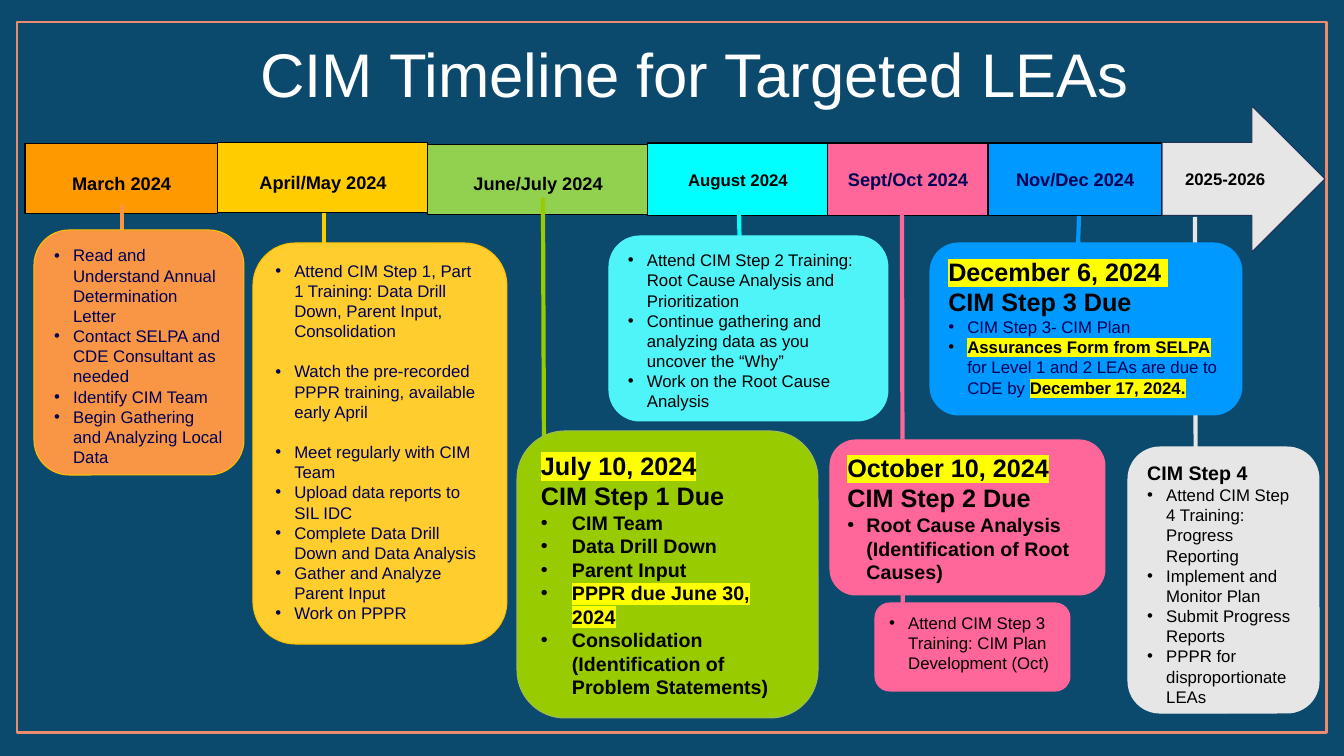
import dataclasses

import pptx
import pptx.dml.color
import pptx.enum.shapes
import pptx.enum.text
import pptx.oxml.ns
import pptx.util
from lxml import etree

RGBColor = pptx.dml.color.RGBColor
SHAPE = pptx.enum.shapes.MSO_SHAPE
ALIGN = pptx.enum.text.PP_ALIGN
ANCHOR = pptx.enum.text.MSO_ANCHOR
qn = pptx.oxml.ns.qn

PX = 12192000 / 1344
FONT = "Arial"

BACKGROUND = RGBColor(0x0C, 0x4A, 0x6D)
CORAL = RGBColor(0xED, 0x8B, 0x6F)
WHITE = RGBColor(0xFF, 0xFF, 0xFF)
BLACK = RGBColor(0, 0, 0)
NAVY = RGBColor(0, 0, 0x54)
ARROW_EDGE = RGBColor(0x1E, 0x32, 0x56)
ORANGE = RGBColor(0xFF, 0x99, 0)
SOFT_ORANGE = RGBColor(0xF8, 0x96, 0x45)
AMBER = RGBColor(0xFF, 0xC0, 0)
YELLOW = RGBColor(0xFF, 0xCC, 0)
SOFT_YELLOW = RGBColor(0xFF, 0xCD, 0x2D)
GREEN = RGBColor(0x92, 0xD0, 0x50)
LIME = RGBColor(0x99, 0xCC, 0)
LIME_EDGE = RGBColor(0x9C, 0xBB, 0x58)
CYAN = RGBColor(0, 0xFF, 0xFF)
SOFT_CYAN = RGBColor(0x4E, 0xF4, 0xF8)
PINK = RGBColor(0xFF, 0x66, 0x99)
BLUE = RGBColor(0, 0x99, 0xFF)
GRAY = RGBColor(0xE7, 0xE6, 0xE6)
HIGHLIGHT = RGBColor(0xFF, 0xFF, 0)


@dataclasses.dataclass
class Run:
    text: str
    size: int = 12
    color: RGBColor = BLACK
    bold: bool = False
    marked: bool = False


@dataclasses.dataclass
class Item:
    """One paragraph; an indent above zero makes it a bullet."""
    runs: list
    indent: int = 0
    gap: float = 0


def px(length):
    return pptx.util.Emu(round(length * PX))


def bullets(texts, indent=19, **style):
    return [Item([Run(text, **style)], indent) for text in texts]


def due_heading(date, step):
    return [Item([Run(date, 18, bold=True, marked=True)]),
            Item([Run(step, 18, bold=True)])]


def add_run(paragraph, run):
    text_run = paragraph.add_run()
    text_run.text = run.text
    font = text_run.font
    font.size = pptx.util.Pt(run.size)
    font.bold = run.bold
    font.color.rgb = run.color
    font.name = FONT
    if run.marked:
        fill = text_run._r.rPr.find(qn("a:solidFill"))
        highlight = etree.Element(qn("a:highlight"))
        etree.SubElement(highlight, qn("a:srgbClr"), val=str(HIGHLIGHT))
        fill.addnext(highlight)


def add_items(frame, items, align):
    frame.word_wrap = True
    for index, item in enumerate(items):
        paragraph = frame.add_paragraph() if index else frame.paragraphs[0]
        paragraph.alignment = align
        if item.gap:
            paragraph.space_before = pptx.util.Pt(item.gap)
        if item.indent:
            properties = paragraph._p.get_or_add_pPr()
            properties.set("marL", str(px(item.indent)))
            properties.set("indent", str(px(-item.indent)))
            etree.SubElement(properties, qn("a:buFont"), typeface=FONT)
            etree.SubElement(properties, qn("a:buChar"), char="•")
        for run in item.runs:
            add_run(paragraph, run)


def add_box(slide, kind, box, fill, edge, width=0.75):
    shape = slide.shapes.add_shape(kind, *map(px, box))
    shape.shadow.inherit = False
    if fill is None:
        shape.fill.background()
    else:
        shape.fill.solid()
        shape.fill.fore_color.rgb = fill
    shape.line.color.rgb = edge
    shape.line.width = pptx.util.Pt(width)
    return shape


def add_title(slide, box):
    title = slide.shapes.title
    title.left, title.top, title.width, title.height = map(px, box)
    title.text_frame.vertical_anchor = ANCHOR.MIDDLE
    add_items(title.text_frame, [Item([Run("CIM Timeline for Targeted LEAs", 44, WHITE)])], ALIGN.CENTER)
    title.text_frame.paragraphs[0].line_spacing = 0.9


def add_period(slide, kind, box, fill, edge, label, drop=0):
    """Adds one stretch of the time band, its label lowered by drop."""
    shape = add_box(slide, kind, box, fill, edge)
    frame = shape.text_frame
    frame.vertical_anchor = ANCHOR.MIDDLE
    frame.margin_top = px(5 + 2 * drop)
    add_items(frame, [Item([label])], ALIGN.CENTER)


def add_band(slide, left, top):
    periods = [
        ("March 2024", 193, 1, 70, ORANGE, BLACK, 13, 4),
        ("April/May 2024", 210, 0, 70, YELLOW, BLACK, 13, 4),
        ("June/July 2024", 220, 1, 71, GREEN, BLACK, 13, 4),
        ("August 2024", 180, 0, 73, CYAN, BLACK, 12, 0),
        ("Sept/Oct 2024", 160, 0, 73, PINK, NAVY, 13, 0),
        ("Nov/Dec 2024", 174, 0, 73, BLUE, NAVY, 13, 0),
    ]
    for text, width, shift, height, fill, color, size, drop in periods:
        add_period(slide, SHAPE.RECTANGLE, (left, top + shift, width, height), fill, BLACK,
                   Run(text, size, color, True), drop)
        left += width
    add_period(slide, SHAPE.RIGHT_ARROW, (left, top - 37, 163, 146), GRAY, ARROW_EDGE,
               Run("2025-2026", bold=True))


def add_stem(slide, start, end, color):
    stem = slide.shapes.add_connector(pptx.enum.shapes.MSO_CONNECTOR.STRAIGHT, *map(px, start + end))
    stem.line.color.rgb = color
    stem.line.width = pptx.util.Pt(3)
    etree.SubElement(stem._element.spPr, qn("a:effectLst"))


def add_card(slide, box, fill, edge, items):
    shape = add_box(slide, SHAPE.ROUNDED_RECTANGLE, box, fill, edge)
    shape.text_frame.vertical_anchor = ANCHOR.TOP
    add_items(shape.text_frame, items, ALIGN.LEFT)


def add_stems(slide):
    for start, end, color in [
        ((122, 205), (122, 231), SOFT_ORANGE),
        ((324, 213), (324, 523), YELLOW),
        ((543, 198), (544, 445), LIME),
        ((739, 205), (740, 267), CYAN),
        ((902, 210), (903, 679), PINK),
        ((1079, 216), (1075, 345), BLUE),
        ((1195, 217), (1196, 565), GRAY),
    ]:
        add_stem(slide, start, end, color)


def add_cards(slide):
    april = bullets([
        "Attend CIM Step 1, Part 1 Training: Data Drill Down, Parent Input, Consolidation",
        "Watch the pre-recorded PPPR training, available early April",
        "Meet regularly with CIM Team",
        "Upload data reports to SIL IDC",
        "Complete Data Drill Down and Data Analysis",
        "Gather and Analyze Parent Input",
        "Work on PPPR"], color=NAVY)
    for item in april[1:3]:
        item.gap = 14.4
    march = bullets([
        "Read and Understand Annual Determination Letter",
        "Contact SELPA and CDE Consultant as needed",
        "Identify CIM Team",
        "Begin Gathering and Analyzing Local Data"], color=NAVY)
    august = bullets([
        "Attend CIM Step 2 Training: Root Cause Analysis and Prioritization",
        "Continue gathering and analyzing data as you uncover the “Why”",
        "Work on the Root Cause Analysis"])
    october = due_heading("October 10, 2024", "CIM Step 2 Due") + bullets(
        ["Root Cause Analysis (Identification of Root Causes)"], size=14, bold=True)
    december = due_heading("December 6, 2024 ", "CIM Step 3 Due") + bullets(
        ["CIM Step 3- CIM Plan"], color=NAVY)
    december.append(Item([
        Run("Assurances Form from SELPA", bold=True, marked=True),
        Run(" for Level 1 and 2 LEAs are due to CDE by ", color=NAVY),
        Run("December 17, 2024.", bold=True, marked=True)], 19))
    july = due_heading("July 10, 2024", "CIM Step 1 Due") + bullets([
        "CIM Team",
        "Data Drill Down",
        "Parent Input",
        "PPPR due June 30, 2024",
        "Consolidation (Identification of Problem Statements)"], 31, size=14, bold=True)
    july[5].runs[0].marked = True
    step_three = bullets(["Attend CIM Step 3 Training: CIM Plan Development (Oct)"])
    step_four = [Item([Run("CIM Step 4", 14, bold=True)])] + bullets([
        "Attend CIM Step 4 Training: Progress Reporting",
        "Implement and Monitor Plan",
        "Submit Progress Reports",
        "PPPR for disproportionate LEAs"])
    for box, fill, edge, items in [
        ((253, 243, 254, 401), SOFT_YELLOW, AMBER, april),
        ((34, 230, 210, 245), SOFT_ORANGE, AMBER, march),
        ((609, 236, 279, 185), SOFT_CYAN, SOFT_CYAN, august),
        ((830, 440, 275, 155), PINK, PINK, october),
        ((930, 243, 312, 172), BLUE, BLUE, december),
        ((517, 431, 301, 287), LIME, LIME_EDGE, july),
        ((875, 603, 195, 88), PINK, PINK, step_three),
        ((1128, 447, 191, 266), GRAY, GRAY, step_four),
    ]:
        add_card(slide, box, fill, edge, items)


def main():
    presentation = pptx.Presentation()
    presentation.slide_width, presentation.slide_height = px(1344), px(756)
    slide = presentation.slides.add_slide(presentation.slide_layouts[5])
    slide.background.fill.solid()
    slide.background.fill.fore_color.rgb = BACKGROUND
    add_box(slide, SHAPE.RECTANGLE, (17, 22, 1310, 711), None, CORAL, 2)
    add_title(slide, (40, 5, 1310, 146))
    add_band(slide, 25, 143)
    add_stems(slide)
    add_cards(slide)
    presentation.save("out.pptx")


if __name__ == "__main__":
    main()
